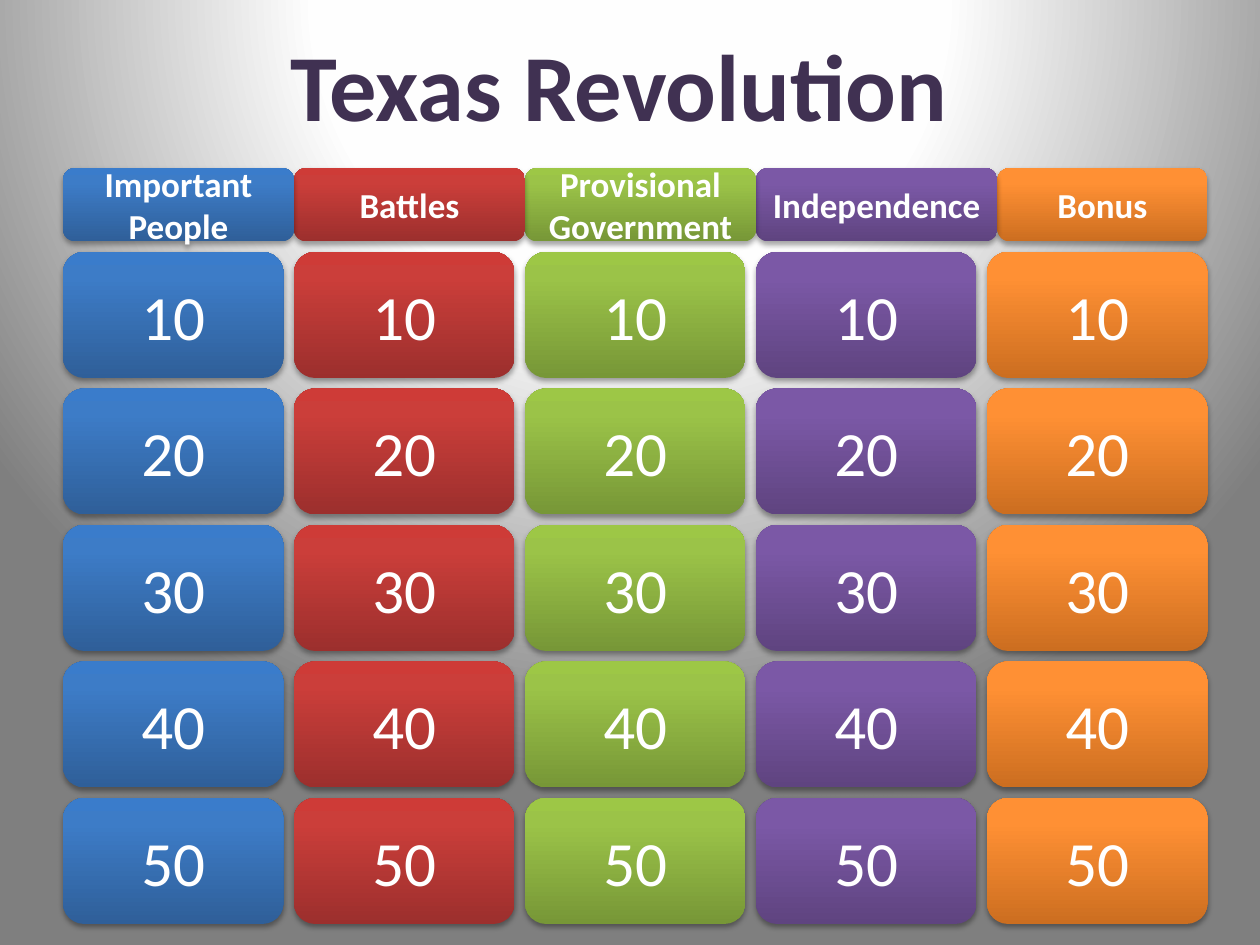
from dataclasses import dataclass
from lxml import etree
from pptx import Presentation, util as u
from pptx.dml.color import RGBColor
from pptx.enum import shapes, text
from pptx.oxml import parse_xml
from pptx.oxml.ns import nsdecls, qn

GRID = 12
LEFT, TOP, HEAD = 6, 24, 16
WIDE, TALL, GAP = 21, 12, 1
POINTS = (10, 20, 30, 40, 50)
HEAD_FONT = {"name": "Calibri", "size": u.Pt(20), "bold": True}
TILE_FONT = {"name": "Calibri", "size": u.Pt(36), "bold": False}
TITLE_FONT = {"name": "Calibri", "size": u.Pt(54), "bold": True}
RISE = '<a:lin {} ang="16200000" scaled="0"/>'
GLOW = ('<a:path {} path="circle"><a:fillToRect l="50000" t="-80000" '
        'r="50000" b="180000"/></a:path>')
SHADE = ('<a:outerShdw {} blurRad="40000" dist="23000" dir="5400000" '
         'rotWithShape="0"><a:srgbClr val="000000"><a:alpha val="35000"/>'
         '</a:srgbClr></a:outerShdw>')


@dataclass
class Topic:
    name: str
    span: int
    tones: tuple


@dataclass
class Box:
    x: float
    y: float
    w: float
    h: float

    def place(self) -> list:
        return [u.Inches(n / GRID) for n in (self.x, self.y, self.w, self.h)]


TOPICS = [
    Topic("Important People", 22, ("2F5F99", "3D7CC7", "3A7CCB")),
    Topic("Battles", 22, ("9C2F2D", "CB3E3A", "CE3B37")),
    Topic("Provisional Government", 22, ("779737", "9BC348", "9DC746")),
    Topic("Independence", 23, ("5F4480", "7B58A6", "7C57A8")),
    Topic("Bonus", 20, ("CC6E20", "FF9034", "FF9136")),
]


def tint(code: str) -> RGBColor:
    return RGBColor.from_string(code)


def make(form: str):
    return parse_xml(form.format(nsdecls("a")))


def blend(node, tones: tuple, mid: int, way: str) -> None:
    grad = next(node.iter(qn("a:gradFill")))
    for part in list(grad):
        grad.remove(part)
    stops = etree.SubElement(grad, qn("a:gsLst"))
    for share, tone in zip((0, mid, 100), tones):
        stop = etree.SubElement(stops, qn("a:gs"), pos=str(share * 1000))
        etree.SubElement(stop, qn("a:srgbClr"), val=str(tint(tone)))
    grad.append(make(way))


def write(frame, words: str, font: dict, tone: str) -> None:
    frame.word_wrap = True
    frame.vertical_anchor = text.MSO_ANCHOR.MIDDLE
    para = frame.paragraphs[0]
    para.alignment = text.PP_ALIGN.CENTER
    run = para.add_run()
    run.text = words
    for key, value in font.items():
        setattr(run.font, key, value)
    run.font.color.rgb = tint(tone)


def tile(slide, box: Box, words: str, tones: tuple, font: dict) -> None:
    shape = slide.shapes.add_shape(
        shapes.MSO_SHAPE.ROUNDED_RECTANGLE, *box.place())
    shape.fill.gradient()
    blend(shape.element, tones, 80, RISE)
    shape.line.fill.background()
    shape.shadow.inherit = False
    shape.element.spPr.find(qn("a:effectLst")).append(make(SHADE))
    write(shape.text_frame, words, font, "FFFFFF")


def main() -> None:
    deck = Presentation()
    deck.slide_width, deck.slide_height = u.Inches(10), u.Inches(7.5)
    slide = deck.slides.add_slide(deck.slide_layouts[5])
    slide.background.fill.gradient()
    blend(slide.element, ("FFFFFF", "FEFEFE", "7F7F7F"), 40, GLOW)

    title = slide.shapes.title
    spots = Box(LEFT, 0, 108, HEAD).place()
    for key, value in zip(("left", "top", "width", "height"), spots):
        setattr(title, key, value)
    write(title.text_frame, "Texas Revolution ", TITLE_FONT, "403152")

    edge = LEFT + sum(topic.span for topic in TOPICS)
    for topic in reversed(TOPICS):
        edge -= topic.span
        tile(slide, Box(edge, HEAD, topic.span, 7), topic.name,
             topic.tones, HEAD_FONT)

    for col, topic in enumerate(TOPICS):
        for row, score in enumerate(POINTS):
            box = Box(LEFT + col * (WIDE + GAP), TOP + row * (TALL + GAP),
                      WIDE, TALL)
            tile(slide, box, str(score), topic.tones, TILE_FONT)

    deck.save("out.pptx")


if __name__ == "__main__":
    main()
